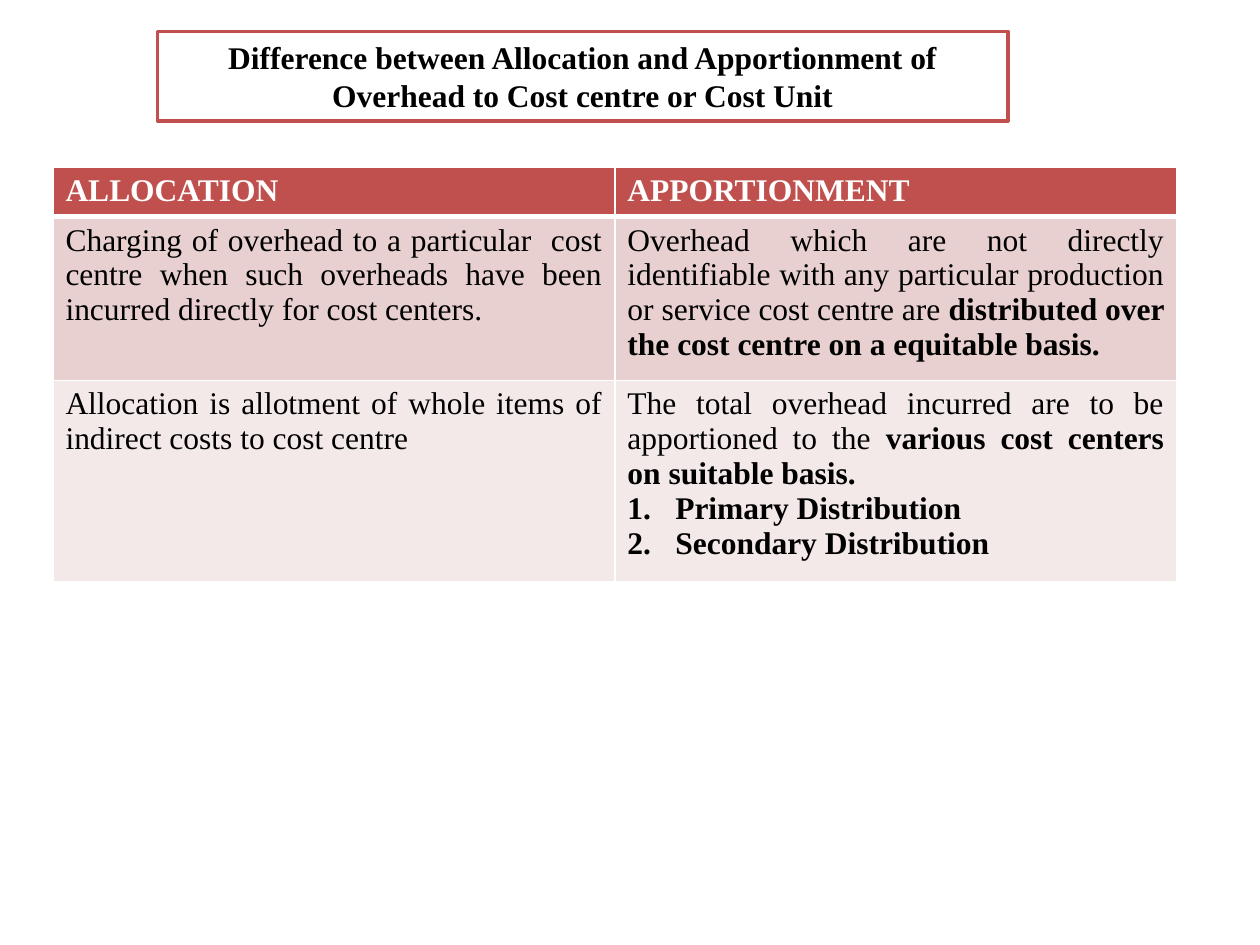
from dataclasses import dataclass

import lxml.etree
import pptx
import pptx.dml.color
import pptx.enum.text
import pptx.oxml.ns
import pptx.util

Inches = pptx.util.Inches
Pt = pptx.util.Pt
RGBColor = pptx.dml.color.RGBColor
Align = pptx.enum.text.PP_ALIGN
qn = pptx.oxml.ns.qn

RED = RGBColor(0xC0, 0x50, 0x4D)
ROSE = RGBColor(0xE8, 0xD0, 0xD0)
BLUSH = RGBColor(0xF4, 0xE9, 0xE9)
WHITE = RGBColor(0xFF, 0xFF, 0xFF)
BLACK = RGBColor(0x00, 0x00, 0x00)
FONT = "Times New Roman"
TEXT_SIZE = Pt(18)


@dataclass(frozen=True)
class Phrase:
    text: str
    bold: bool = False


@dataclass(frozen=True)
class Passage:
    phrases: tuple[Phrase, ...]
    numbered: bool = False


@dataclass(frozen=True)
class ComparisonRow:
    height: float
    fill: RGBColor
    color: RGBColor
    top_border: float
    bottom_border: float
    allocation: tuple[Passage, ...]
    apportionment: tuple[Passage, ...]


HEADING = Passage((
    Phrase("Difference between Allocation and Apportionment of Overhead to Cost centre or Cost Unit", True),
))

COMPARISON = (
    ComparisonRow(
        0.39, RED, WHITE, 1, 3,
        (Passage((Phrase("ALLOCATION", True),)),),
        (Passage((Phrase("APPORTIONMENT", True),)),),
    ),
    ComparisonRow(
        1.3, ROSE, BLACK, 3, 1,
        (Passage((Phrase(
            "Charging of overhead to a particular  cost centre when such overheads "
            "have been incurred directly for cost centers."
        ),)),),
        (Passage((
            Phrase(
                "Overhead which are not directly identifiable with any particular "
                "production or service cost centre are "
            ),
            Phrase("distributed over the cost centre on a equitable basis.", True),
        )),),
    ),
    ComparisonRow(
        1.6, BLUSH, BLACK, 1, 1,
        (Passage((Phrase("Allocation is allotment of whole items of indirect costs to cost centre"),)),),
        (
            Passage((
                Phrase("The total overhead incurred are to be apportioned to the "),
                Phrase("various cost centers on suitable basis.", True),
            )),
            Passage((Phrase("Primary Distribution", True),), numbered=True),
            Passage((Phrase("Secondary Distribution", True),), numbered=True),
        ),
    ),
)


def number_paragraph(paragraph) -> None:
    properties = paragraph._p.get_or_add_pPr()
    properties.set("marL", str(Inches(0.38)))
    properties.set("indent", str(-Inches(0.38)))
    lxml.etree.SubElement(properties, qn("a:buFont"), typeface="+mj-lt")
    lxml.etree.SubElement(properties, qn("a:buAutoNum"), type="arabicPeriod")


def write_passages(frame, passages: tuple[Passage, ...], color: RGBColor, alignment) -> None:
    for index, passage in enumerate(passages):
        paragraph = frame.add_paragraph() if index else frame.paragraphs[0]
        paragraph.alignment = alignment
        if passage.numbered:
            number_paragraph(paragraph)
        for phrase in passage.phrases:
            run = paragraph.add_run()
            run.text = phrase.text
            run.font.name = FONT
            run.font.size = TEXT_SIZE
            run.font.bold = phrase.bold
            run.font.color.rgb = color


def border_cell(cell, top: float, bottom: float) -> None:
    properties = cell._tc.get_or_add_tcPr()
    widths = {"a:lnL": 1, "a:lnR": 1, "a:lnT": top, "a:lnB": bottom}
    for position, (side, width) in enumerate(widths.items()):
        border = lxml.etree.Element(qn(side), w=str(Pt(width)))
        fill = lxml.etree.SubElement(border, qn("a:solidFill"))
        lxml.etree.SubElement(fill, qn("a:srgbClr"), val=str(WHITE))
        properties.insert(position, border)


def draw_heading(slide) -> None:
    heading = slide.shapes.title
    heading.left, heading.top = Inches(1.25), Inches(0.25)
    heading.width, heading.height = Inches(6.75), Inches(0.71)
    heading.fill.solid()
    heading.fill.fore_color.rgb = WHITE
    heading.line.color.rgb = RED
    heading.line.width = Pt(2)
    frame = heading.text_frame
    frame.word_wrap = True
    frame.auto_size = pptx.enum.text.MSO_AUTO_SIZE.NONE
    frame.vertical_anchor = pptx.enum.text.MSO_ANCHOR.TOP
    write_passages(frame, (HEADING,), BLACK, Align.CENTER)


def draw_comparison(slide, rows: tuple[ComparisonRow, ...]) -> None:
    total_height = sum(row.height for row in rows)
    table = slide.shapes.add_table(
        len(rows), 2, Inches(0.42), Inches(1.33), Inches(8.92), Inches(total_height)
    ).table
    for row_index, row in enumerate(rows):
        table.rows[row_index].height = Inches(row.height)
        for column, passages in enumerate((row.allocation, row.apportionment)):
            cell = table.cell(row_index, column)
            cell.fill.solid()
            cell.fill.fore_color.rgb = row.fill
            border_cell(cell, row.top_border, row.bottom_border)
            write_passages(cell.text_frame, passages, row.color, Align.JUSTIFY)


def main() -> None:
    presentation = pptx.Presentation()
    presentation.slide_width = Inches(10)
    presentation.slide_height = Inches(7.5)
    slide = presentation.slides.add_slide(presentation.slide_layouts[5])
    draw_heading(slide)
    draw_comparison(slide, COMPARISON)
    presentation.save("out.pptx")


if __name__ == "__main__":
    main()
